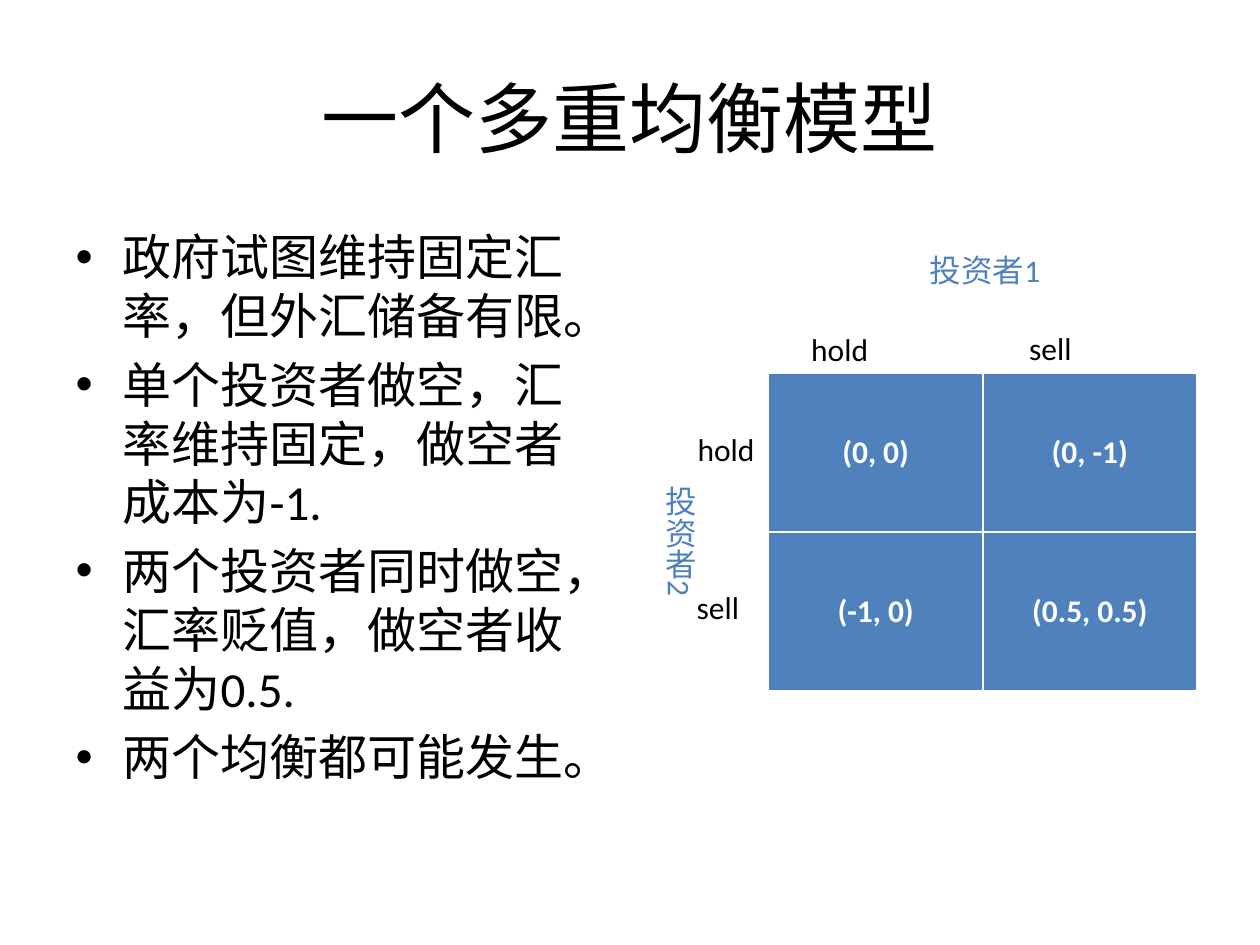
from pptx import Presentation
from pptx.dml.color import RGBColor
from pptx.enum import text
from pptx.util import Pt

COLORS = {"black": "000000", "blue": "4F81BD", "white": "FFFFFF"}
FONT = "Calibri"


def format_paragraph(paragraph, size, color, bold=False):
    for run in paragraph.runs:
        run.font.name = FONT
        run.font.size = Pt(size)
        run.font.bold = bold
        run.font.color.rgb = RGBColor.from_string(COLORS[color])


presentation = Presentation()
presentation.slide_width = Pt(720)
presentation.slide_height = Pt(540)
slide = presentation.slides.add_slide(presentation.slide_layouts[1])

title = slide.shapes.title
title.left, title.top, title.width, title.height = Pt(36), Pt(21.6), Pt(648), Pt(90)
title.text_frame.text = "一个多重均衡模型"
title.text_frame.vertical_anchor = text.MSO_ANCHOR.MIDDLE
title.text_frame.paragraphs[0].alignment = text.PP_ALIGN.CENTER
format_paragraph(title.text_frame.paragraphs[0], 44, "black")

body = slide.placeholders[1]
body.left, body.top, body.width, body.height = Pt(36), Pt(126), Pt(318), Pt(356.4)
body.text_frame.text = "\n".join([
    "政府试图维持固定汇率，但外汇储备有限。",
    "单个投资者做空，汇率维持固定，做空者成本为-1.",
    "两个投资者同时做空，汇率贬值，做空者收益为0.5.",
    "两个均衡都可能发生。",
])
for paragraph in body.text_frame.paragraphs:
    format_paragraph(paragraph, 28, "black")

payoffs = [["(0, 0)", "(0, -1)"], ["(-1, 0)", "(0.5, 0.5)"]]
table = slide.shapes.add_table(2, 2, Pt(439.2), Pt(213.4), Pt(244.8), Pt(181.4)).table
table.horz_banding = False
for row, values in enumerate(payoffs):
    for column, value in enumerate(values):
        cell = table.cell(row, column)
        cell.fill.solid()
        cell.fill.fore_color.rgb = RGBColor.from_string(COLORS["blue"])
        cell.vertical_anchor = text.MSO_ANCHOR.MIDDLE
        cell.text_frame.text = value
        cell.text_frame.paragraphs[0].alignment = text.PP_ALIGN.CENTER
        format_paragraph(cell.text_frame.paragraphs[0], 18, "white", True)

labels = [
    ("投资者1", 524.2, 139.7, 170, 29, "blue", "horz"),
    ("投资者2", 367.2, 270.7, 36, 108.7, "blue", "eaVert"),
    ("hold", 456.5, 185, 96.5, 29, "black", "horz"),
    ("sell", 581, 184.3, 85.7, 29, "black", "horz"),
    ("hold", 391.5, 241.9, 51, 29, "black", "horz"),
    ("sell", 391, 332.6, 51, 29, "black", "horz"),
]
for words, left, top, width, height, color, direction in labels:
    label = slide.shapes.add_textbox(Pt(left), Pt(top), Pt(width), Pt(height))
    frame = label.text_frame
    frame.word_wrap = True
    frame.auto_size = text.MSO_AUTO_SIZE.SHAPE_TO_FIT_TEXT
    frame._txBody.bodyPr.set("vert", direction)
    frame.text = words
    format_paragraph(frame.paragraphs[0], 18, color)

presentation.save("out.pptx")
